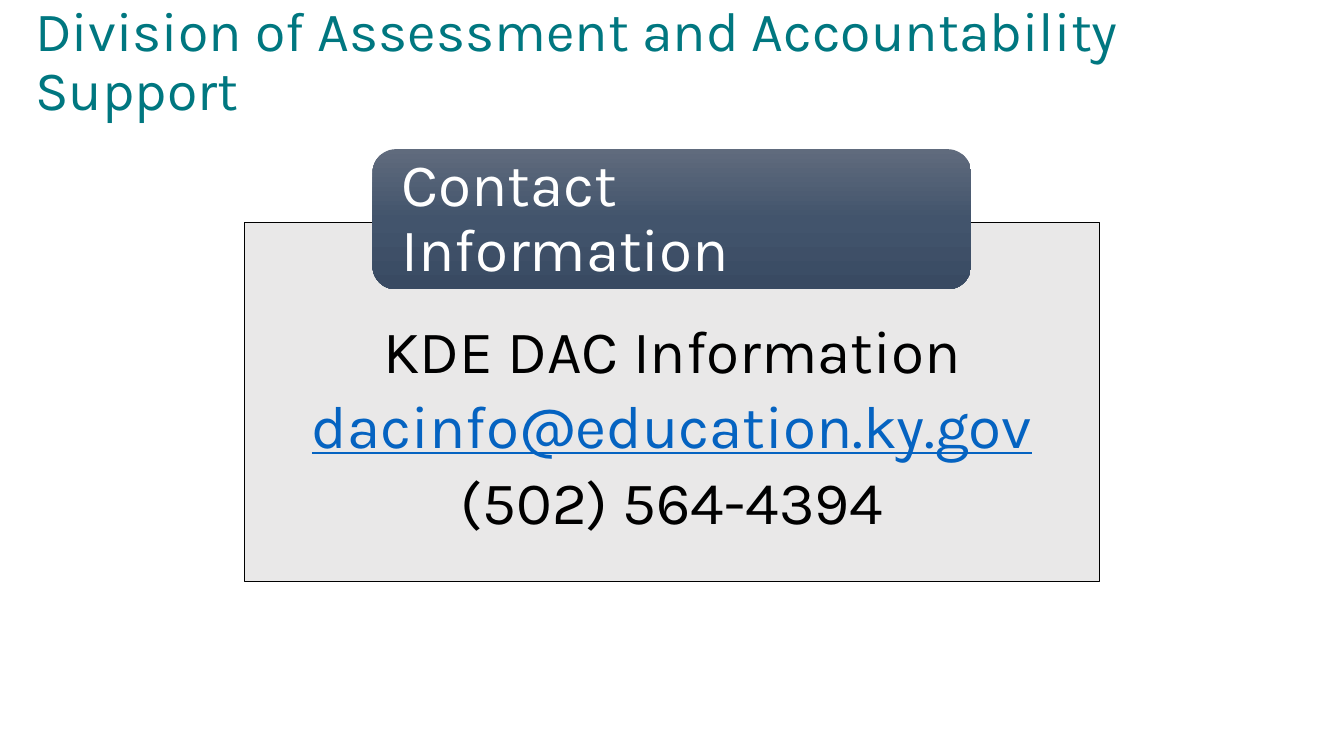
from copy import deepcopy

from pptx import Presentation
from pptx.dml.color import RGBColor
from pptx.enum.shapes import MSO_SHAPE
from pptx.enum.text import MSO_ANCHOR, PP_ALIGN
from pptx.oxml.ns import qn
from pptx.util import Inches, Pt

TEAL = RGBColor(0x00, 0x77, 0x80)
PANEL_GREY = RGBColor(0xE7, 0xE6, 0xE6)
LINK_BLUE = RGBColor(0x05, 0x63, 0xC1)
BLACK = RGBColor(0x00, 0x00, 0x00)
WHITE = RGBColor(0xFF, 0xFF, 0xFF)
TAB_GRADIENT = (
    RGBColor(0x60, 0x6B, 0x7D),
    RGBColor(0x42, 0x54, 0x6C),
    RGBColor(0x39, 0x4A, 0x62),
)

FONT = "Karla"
SLIDE_W, SLIDE_H = Inches(13.33), Inches(7.5)
TITLE_SIZE, BODY_SIZE = Pt(39.6), Pt(43)
PANEL_W, PANEL_H = Inches(8.48), Inches(3.56)
PANEL_LEFT, PANEL_TOP = (SLIDE_W - PANEL_W) // 2, Inches(2.21)
TAB_W, TAB_H = PANEL_W * 7 // 10, Inches(1.39)
TAB_LEFT, TAB_TOP = PANEL_LEFT + Inches(1.27), Inches(1.48)


def write_lines(s, lines, size, insets, anchor, align=PP_ALIGN.LEFT, gap=0):
    """Fill a shape with (text, colour, underlined) lines."""
    tf = s.text_frame
    tf.word_wrap = True
    tf.vertical_anchor = anchor
    tf.margin_left, tf.margin_top, tf.margin_right, tf.margin_bottom = map(Inches, insets)
    tf.text = "\n".join(text for text, _, _ in lines)
    for p, (_, colour, underlined) in zip(tf.paragraphs, lines):
        p.alignment = align
        p.line_spacing = 0.9
        p.space_after = Pt(gap)
        font = p.runs[0].font
        font.name = FONT
        font.size = size
        font.color.rgb = colour
        font.underline = underlined


def add_title(slide, text):
    s = slide.shapes.add_textbox(0, 0, SLIDE_W, SLIDE_H // 6)
    write_lines(s, [(text, TEAL, False)], TITLE_SIZE,
                (0.35, 0.05, 0.1, 0.05), MSO_ANCHOR.MIDDLE)


def add_panel(slide, lines):
    s = slide.shapes.add_shape(MSO_SHAPE.RECTANGLE, PANEL_LEFT, PANEL_TOP, PANEL_W, PANEL_H)
    s.shadow.inherit = False
    s.fill.solid()
    s.fill.fore_color.rgb = PANEL_GREY
    colour = s._element.spPr.find(qn("a:solidFill"))[0]
    colour.append(colour.makeelement(qn("a:alpha"), {"val": "90000"}))
    s.line.color.rgb = BLACK
    s.line.width = Pt(0.75)
    write_lines(s, lines, BODY_SIZE, (0.66, 0.98, 0.66, 0.33),
                MSO_ANCHOR.TOP, PP_ALIGN.CENTER, gap=7.5)


def add_tab(slide, text):
    """Add the rounded heading that overlaps the panel's top edge."""
    s = slide.shapes.add_shape(MSO_SHAPE.ROUNDED_RECTANGLE, TAB_LEFT, TAB_TOP, TAB_W, TAB_H)
    s.shadow.inherit = False
    s.line.fill.background()
    s.fill.gradient()
    s.fill.gradient_angle = 270
    stops = s._element.spPr.find(qn("a:gradFill")).find(qn("a:gsLst"))
    stops.append(deepcopy(stops[-1]))
    for i, (stop, colour) in enumerate(zip(s.fill.gradient_stops, TAB_GRADIENT)):
        stop.position = i / (len(TAB_GRADIENT) - 1)
        stop.color.rgb = colour
    write_lines(s, [(text, WHITE, False)], BODY_SIZE,
                (0.22, 0, 0.22, 0), MSO_ANCHOR.MIDDLE)


def main():
    prs = Presentation()
    prs.slide_width, prs.slide_height = SLIDE_W, SLIDE_H
    slide = prs.slides.add_slide(prs.slide_layouts[6])
    add_title(slide, "Division of Assessment and Accountability Support")
    add_panel(slide, [
        ("KDE DAC Information", BLACK, False),
        ("dacinfo@education.ky.gov", LINK_BLUE, True),
        ("(502) 564-4394", BLACK, False),
    ])
    add_tab(slide, "Contact Information")
    prs.save("out.pptx")


if __name__ == "__main__":
    main()
